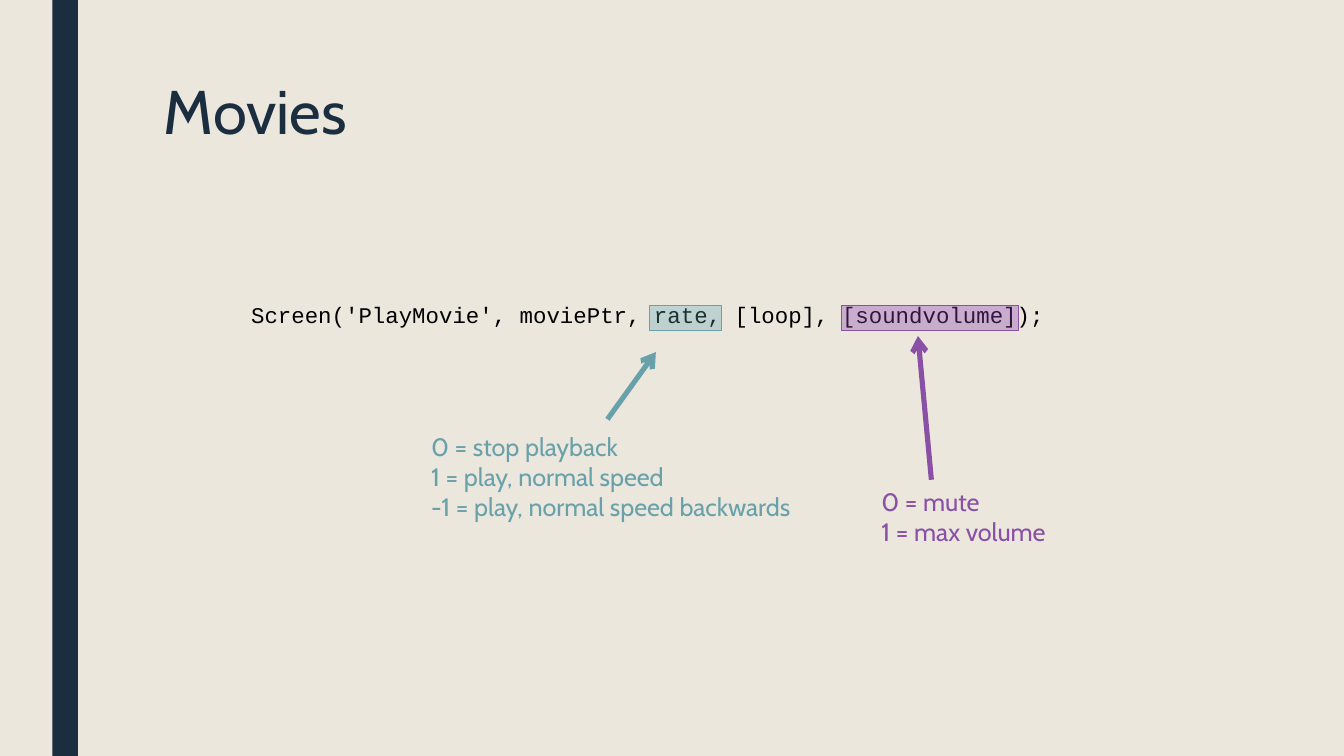
from pptx import Presentation
from pptx.dml.color import RGBColor as RGB
from pptx.enum.shapes import MSO_CONNECTOR as Link, MSO_SHAPE as Form
from pptx.enum.text import MSO_ANCHOR as Anchor
from pptx.oxml.ns import qn
from pptx.util import Inches, Pt
from lxml.etree import SubElement as Sub


class Page:
    """Holds the style and the slide being drawn."""

    hues = {
        "paper": "EBE7DD", "navy": "1A2E40", "black": "000000",
        "teal": "69A1AB", "teal low": "5A98A3", "teal high": "58ACBB",
        "plum": "8950A6", "plum low": "8146A3", "plum high": "903BBC",
    }
    sans = "Cabin"
    mono = "Courier New"

    def __init__(self, deck):
        self.slide = deck.slides.add_slide(deck.slide_layouts[6])
        self.shapes = self.slide.shapes
        fill = self.slide.background.fill
        fill.solid()
        fill.fore_color.rgb = self.hue("paper")

    def hue(self, name):
        return RGB.from_string(self.hues[name])

    def rect(self, *box):
        shape = self.shapes.add_shape(Form.RECTANGLE, *map(Inches, box))
        shape.shadow.inherit = False
        return shape

    def bar(self, box, hue):
        shape = self.rect(*box)
        shape.fill.solid()
        shape.fill.fore_color.rgb = self.hue(hue)
        shape.line.fill.background()

    def mark(self, left, width, hue, alpha):
        shape = self.rect(left, 2.27, width, 0.19)
        shape.fill.gradient()
        shape.fill.gradient_angle = 90
        for stop, end in zip(shape.fill.gradient_stops, ("low", "high")):
            stop.color.rgb = self.hue(f"{hue} {end}")
        for tint in shape._element.spPr.iter(qn("a:srgbClr")):
            Sub(tint, qn("a:alpha"), val=str(alpha * 1000))
        shape.line.color.rgb = self.hue(hue)
        shape.line.width = Pt(0.5)

    def arrow(self, start, end, hue):
        line = self.shapes.add_connector(Link.STRAIGHT, *map(Inches, start + end))
        line.line.color.rgb = self.hue(hue)
        line.line.width = Pt(2.75)
        Sub(line.line._get_or_add_ln(), qn("a:tailEnd"), type="arrow")
        Sub(line._element.spPr, qn("a:effectLst"))

    def text(self, box, lines, size, hue, font=sans, lead=None):
        frame = self.shapes.add_textbox(*map(Inches, box)).text_frame
        frame.word_wrap = True
        frame.vertical_anchor = Anchor.TOP
        for i, line in enumerate(lines):
            para = frame.add_paragraph() if i else frame.paragraphs[0]
            para.line_spacing = lead
            run = para.add_run()
            run.text = line
            run.font.name = font
            run.font.size = Pt(size)
            run.font.color.rgb = self.hue(hue)


def main():
    wide = 10
    high = wide * 9 / 16
    deck = Presentation()
    deck.slide_width, deck.slide_height = Inches(wide), Inches(high)
    page = Page(deck)
    page.bar((0.39, 0, 0.19, high), "navy")
    page.text((1.12, 0.56, 7.88, 1.22), ["Movies"], 33, "navy", lead=0.89)
    code = "Screen('PlayMovie', moviePtr, rate, [loop], [soundvolume]);"
    page.text((1.77, 2.19, 6.6, 0.3), [code], 12, "black", page.mono)
    page.arrow((4.52, 3.12), (4.88, 2.62), "teal")
    rates = ["0 = stop playback", "1 = play, normal speed",
             "-1 = play, normal speed backwards"]
    page.text((3.11, 3.16, 3.54, 0.78), rates, 13.5, "teal")
    page.mark(4.83, 0.54, "teal", 30)
    page.mark(6.26, 1.32, "plum", 35)
    page.arrow((6.93, 3.57), (6.83, 2.5), "plum")
    page.text((6.46, 3.57, 1.59, 0.56), ["0 = mute", "1 = max volume"], 13.5, "plum")
    deck.save("out.pptx")


if __name__ == "__main__":
    main()
